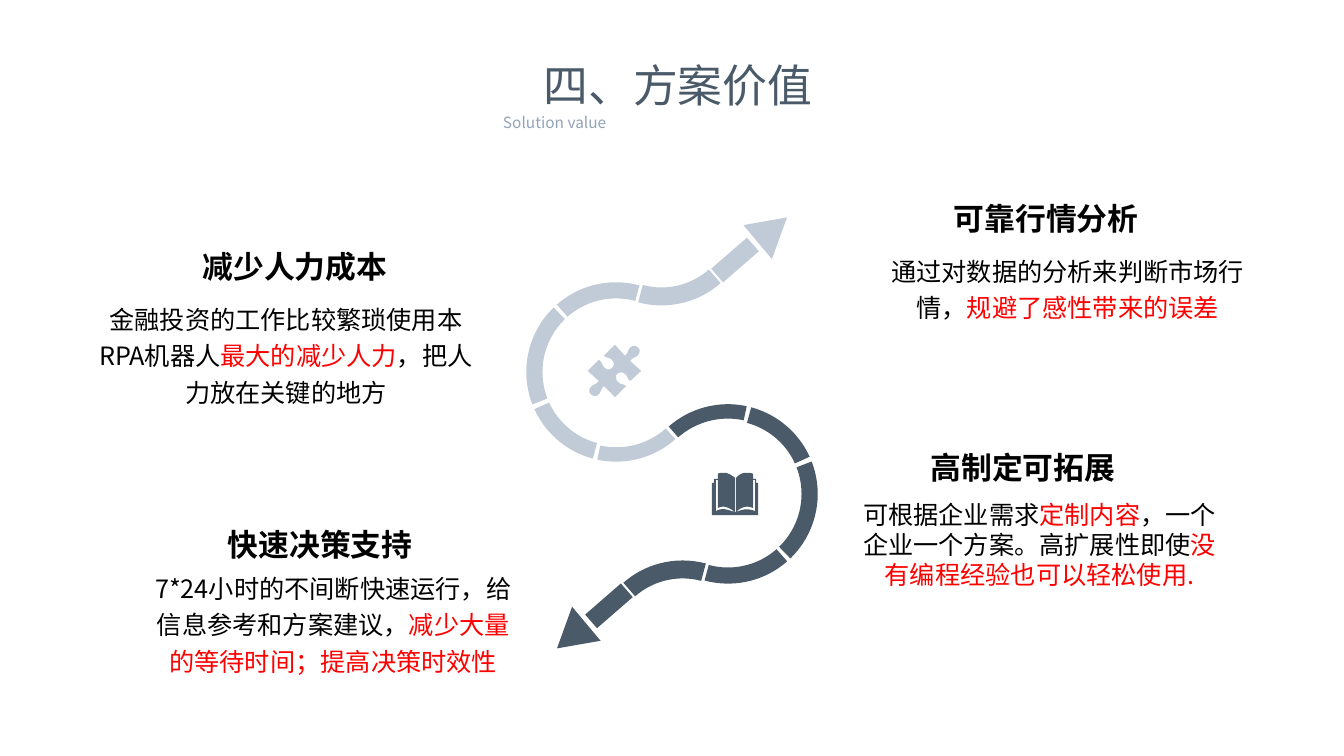
"""Build the solution value slide: an S-shaped double arrow with four benefits."""
from lxml import etree
from pptx import Presentation
from pptx import util as u
from pptx.dml.color import RGBColor
from pptx.enum import shapes, text
from pptx.oxml import ns

FONT = "Noto Sans CJK SC"
SLATE = RGBColor(0x4A, 0x5A, 0x69)
MIST = RGBColor(0xC1, 0xCB, 0xD7)
GREY_BLUE = RGBColor(0x92, 0xA3, 0xB8)
BLACK = RGBColor(0, 0, 0)
RED = RGBColor(0xFF, 0, 0)


def write(frame, runs, size, align, spacing=1.0, bold=False, wrap=True):
    frame.word_wrap = wrap
    frame.vertical_anchor = text.MSO_ANCHOR.TOP
    paragraph = frame.paragraphs[0]
    paragraph.alignment = align
    paragraph.line_spacing = spacing
    for words, color in runs:
        run = paragraph.add_run()
        run.text = words
        run.font.name = FONT
        run.font.size = u.Pt(size)
        run.font.bold = bold
        run.font.color.rgb = color
        east_asian = etree.SubElement(run.font._element, ns.qn("a:ea"))
        east_asian.set("typeface", FONT)


def paint(shape, color):
    shape.shadow.inherit = False
    shape.fill.solid()
    shape.fill.fore_color.rgb = color
    shape.line.fill.background()


deck = Presentation()
deck.slide_width = u.Inches(13.33)
deck.slide_height = u.Inches(7.5)
slide = deck.slides.add_slide(deck.slide_layouts[5])

heading = slide.shapes.title
heading.left, heading.top = u.Inches(5.28), u.Inches(0.52)
heading.width, heading.height = u.Inches(2.89), u.Inches(0.64)
write(heading.text_frame, [("四、方案价值", SLATE)], 32,
      text.PP_ALIGN.CENTER, wrap=False)

subtitle = slide.shapes.add_textbox(
    u.Inches(4.89), u.Inches(1.07), u.Inches(3.55), u.Inches(0.29))
write(subtitle.text_frame, [("Solution value", GREY_BLUE)], 11,
      text.PP_ALIGN.JUSTIFY)

# Each benefit: heading, its box and spacing, then detail runs, box and spacing
benefits = [
    ("可靠行情分析", (8.44, 1.93, 3.87, 0.47), 1.0,
     [("通过对数据的分析来判断市场行情，", BLACK), ("规避了感性带来的误差", RED)],
     (8.66, 2.43, 3.86, 0.8), 1.2),
    ("快速决策支持", (1.22, 5.09, 3.91, 0.51), 1.2,
     [("7*24小时的不间断快速运行，给信息参考和方案建议，", BLACK),
      ("减少大量的等待时间；提高决策时效性", RED)],
     (1.35, 5.58, 3.91, 1.16), 1.2),
    ("减少人力成本", (0.97, 2.41, 3.91, 0.47), 1.0,
     [("金融投资的工作比较繁琐使用本RPA机器人", BLACK),
      ("最大的减少人力", RED), ("，把人力放在关键的地方", BLACK)],
     (0.88, 2.91, 3.91, 1.16), 1.2),
    ("高制定可拓展", (8.21, 4.4, 3.87, 0.47), 1.0,
     [("可根据企业需求", BLACK), ("定制内容", RED),
      ("，一个企业一个方案。高扩展性即使", BLACK),
      ("没有编程经验也可以轻松使用.", RED)],
     (8.44, 4.9, 3.74, 1.01), 1.0),
]
for name, name_box, name_spacing, detail, detail_box, detail_spacing in benefits:
    benefit = slide.shapes.add_textbox(*map(u.Inches, name_box))
    write(benefit.text_frame, [(name, BLACK)], 22, text.PP_ALIGN.CENTER,
          name_spacing, bold=True)
    explanation = slide.shapes.add_textbox(*map(u.Inches, detail_box))
    write(explanation.text_frame, detail, 18, text.PP_ALIGN.CENTER,
          detail_spacing)

# Upper arrow: preset, centre, size, rotation, adjustments
ARC = shapes.MSO_SHAPE.BLOCK_ARC
RING = (6.11, 3.69, 1.78, 1.78)
arrow_parts = [
    (ARC, RING, 285, (140.29, 180.58, 0.09)),
    (ARC, RING, 285, (182.21, 0.07, 0.09)),
    (ARC, RING, 285, (108, 138.3, 0.09)),
    (ARC, RING, 105, (182.21, 214.26, 0.08)),
    (ARC, (6.56, 2.14, 1.78, 1.78), 105, (182.21, 0.02, 0.1)),
    (shapes.MSO_SHAPE.RECTANGLE, (7.29, 2.58, 0.18, 0.47), 49, ()),
    (shapes.MSO_SHAPE.ISOSCELES_TRIANGLE, (7.66, 2.28, 0.44, 0.38), 50, ()),
]
# The lower arrow is the upper one turned half round about (6.665, 4.295)
for color, turn in ((MIST, 0), (SLATE, 180)):
    for preset, (x, y, width, height), rotation, adjustments in arrow_parts:
        if turn:
            x, y = 13.33 - x, 8.59 - y
        part = slide.shapes.add_shape(
            preset, u.Inches(x - width / 2), u.Inches(y - height / 2),
            u.Inches(width), u.Inches(height))
        part.rotation = (rotation + turn) % 360
        for index, value in enumerate(adjustments):
            part.adjustments[index] = value
        paint(part, color)

# Outlines: two numbers make a corner, six make a cubic curve
puzzle = [
    (6.33, 3.45), (6.35, 3.46, 6.35, 3.5, 6.33, 3.52),
    (6.31, 3.55, 6.28, 3.54, 6.25, 3.58), (6.36, 3.68), (6.25, 3.78),
    (6.22, 3.76, 6.23, 3.73, 6.2, 3.71), (6.18, 3.69, 6.14, 3.69, 6.12, 3.71),
    (6.11, 3.72, 6.1, 3.76, 6.13, 3.79), (6.16, 3.82, 6.17, 3.8, 6.21, 3.83),
    (6.1, 3.94), (5.99, 3.83), (5.95, 3.87, 5.97, 3.88, 5.94, 3.91),
    (5.92, 3.94, 5.88, 3.93, 5.86, 3.91), (5.84, 3.9, 5.84, 3.86, 5.86, 3.84),
    (5.88, 3.81, 5.91, 3.82, 5.94, 3.78), (5.83, 3.68), (5.94, 3.57),
    (5.98, 3.6, 5.97, 3.63, 6, 3.65), (6.02, 3.67, 6.05, 3.67, 6.07, 3.65),
    (6.09, 3.63, 6.1, 3.6, 6.07, 3.57), (6.04, 3.54, 6.03, 3.56, 5.99, 3.53),
    (6.1, 3.42), (6.2, 3.53), (6.24, 3.49, 6.22, 3.48, 6.25, 3.45),
    (6.28, 3.42, 6.31, 3.43, 6.33, 3.45),
]
book = [
    (7.29, 5.08), (7.3, 5.08), (7.37, 5.05, 7.41, 5.04, 7.49, 5.07),
    (7.49, 4.76), (7.47, 4.76), (7.47, 5.04),
    (7.41, 5.01, 7.35, 5.03, 7.3, 5.08), (7.3, 4.74),
    (7.33, 4.71, 7.36, 4.69, 7.4, 4.69), (7.42, 4.69, 7.44, 4.69, 7.47, 4.7),
    (7.47, 4.75), (7.5, 4.75), (7.5, 4.79), (7.52, 4.79), (7.52, 5.11),
    (7.06, 5.11), (7.06, 4.79), (7.08, 4.79), (7.08, 4.75), (7.12, 4.75),
    (7.12, 4.7), (7.14, 4.69, 7.16, 4.69, 7.18, 4.69),
    (7.22, 4.69, 7.25, 4.71, 7.29, 4.74), (7.29, 5.08),
    (7.23, 5.03, 7.17, 5.01, 7.12, 5.04), (7.12, 4.76), (7.1, 4.76),
    (7.1, 5.07), (7.17, 5.03, 7.22, 5.06, 7.29, 5.08),
]
STEPS = 6
for outline, color in ((puzzle, MIST), (book, SLATE)):
    points = [outline[0]]
    for segment in outline[1:]:
        if len(segment) == 2:
            points.append(segment)
            continue
        knots = [points[-1], segment[:2], segment[2:4], segment[4:]]
        for step in range(1, STEPS + 1):
            t = step / STEPS
            weights = ((1 - t) ** 3, 3 * t * (1 - t) ** 2,
                       3 * t ** 2 * (1 - t), t ** 3)
            points.append(tuple(
                sum(w * knot[axis] for w, knot in zip(weights, knots))
                for axis in (0, 1)))
    corners = [(u.Inches(x), u.Inches(y)) for x, y in points]
    builder = slide.shapes.build_freeform(*corners[0])
    builder.add_line_segments(corners[1:], close=True)
    paint(builder.convert_to_shape(), color)

deck.save("out.pptx")
